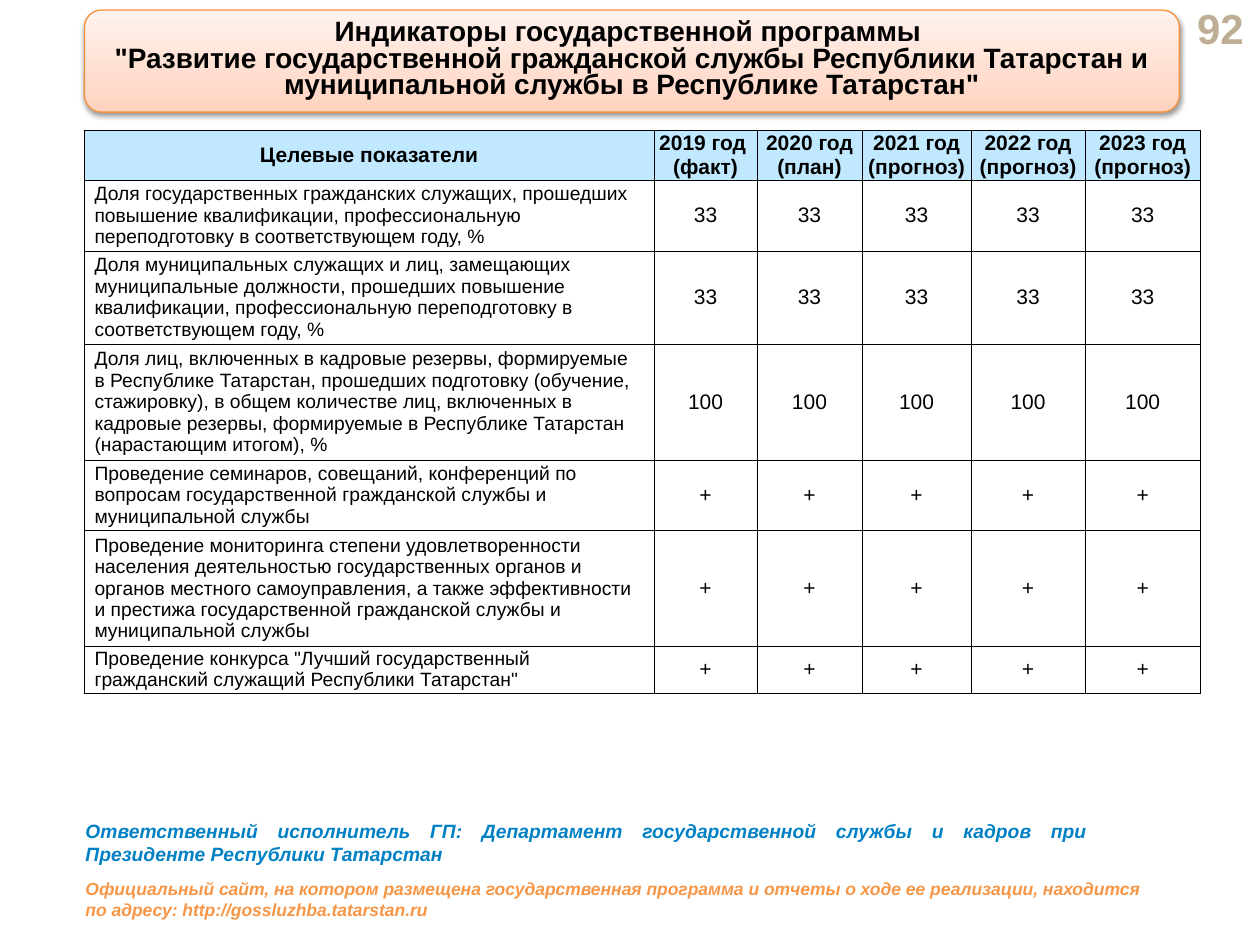
from dataclasses import dataclass

import lxml.etree
import pptx
import pptx.dml.color
import pptx.enum.shapes
import pptx.enum.text
import pptx.oxml
import pptx.oxml.ns
import pptx.util

Inches = pptx.util.Inches
Pt = pptx.util.Pt
ALIGN = pptx.enum.text.PP_ALIGN
ANCHOR = pptx.enum.text.MSO_ANCHOR
FIT = pptx.enum.text.MSO_AUTO_SIZE
NS = pptx.oxml.ns.nsdecls("a")


@dataclass(frozen=True)
class TextStyle:
    size: float
    color: str = "000000"
    bold: bool = False
    italic: bool = False
    align: ALIGN = ALIGN.LEFT


@dataclass(frozen=True)
class Theme:
    font: str = "Arial"
    header_fill: str = "C0E9FF"
    body_fill: str = "FFFFFF"
    grid: str = "000000"
    title_line: str = "F69240"
    title_stops: tuple = ((0, "FFD2BD"), (35, "FFDED0"), (100, "FFF2ED"))
    number: TextStyle = TextStyle(24, "BFAE96", True, align=ALIGN.RIGHT)
    title: TextStyle = TextStyle(16, bold=True, align=ALIGN.CENTER)
    header: TextStyle = TextStyle(12, bold=True, align=ALIGN.CENTER)
    indicator: TextStyle = TextStyle(11)
    value: TextStyle = TextStyle(12, align=ALIGN.CENTER)
    executor: TextStyle = TextStyle(11, "0081C5", True, True, ALIGN.JUSTIFY)
    website: TextStyle = TextStyle(10, "F79646", True, True)


@dataclass(frozen=True)
class Note:
    text: str
    style: TextStyle
    box: tuple[float, float, float, float]
    anchor: ANCHOR = ANCHOR.TOP


@dataclass(frozen=True)
class Indicator:
    name: str
    value: str
    height: float


THEME = Theme()

TITLE = (
    "Индикаторы государственной программы ",
    "\"Развитие государственной гражданской службы Республики Татарстан и "
    "муниципальной службы в Республике Татарстан\"",
)
HEADERS = (
    ("Целевые показатели",),
    ("2019 год ", "(факт)"),
    ("2020 год (план)",),
    ("2021 год", "(прогноз)"),
    ("2022 год", "(прогноз)"),
    ("2023 год", "(прогноз)"),
)
COLUMN_WIDTHS = (4.52, 0.82, 0.83, 0.87, 0.9, 0.92)
HEADER_HEIGHT = 0.4
INDICATORS = (
    Indicator("Доля государственных гражданских служащих, прошедших повышение "
              "квалификации, профессиональную переподготовку в соответствующем году, %",
              "33", 0.56),
    Indicator("Доля муниципальных служащих и лиц, замещающих муниципальные должности, "
              "прошедших повышение квалификации, профессиональную переподготовку в "
              "соответствующем году, %", "33", 0.74),
    Indicator("Доля лиц, включенных в кадровые резервы, формируемые в Республике "
              "Татарстан, прошедших подготовку (обучение, стажировку), в общем "
              "количестве лиц, включенных в кадровые резервы, формируемые в Республике "
              "Татарстан (нарастающим итогом), %", "100", 0.92),
    Indicator("Проведение семинаров, совещаний, конференций по вопросам "
              "государственной гражданской службы и муниципальной службы", "+", 0.56),
    Indicator("Проведение мониторинга степени удовлетворенности населения "
              "деятельностью государственных органов и органов местного "
              "самоуправления, а также эффективности и престижа государственной "
              "гражданской службы и муниципальной службы", "+", 0.92),
    Indicator("Проведение конкурса \"Лучший государственный гражданский служащий "
              "Республики Татарстан\"", "+", 0.37),
)
NOTES = (
    Note("92", THEME.number, (9.11, 0.05, 0.86, 0.34), ANCHOR.MIDDLE),
    Note("Ответственный исполнитель ГП: Департамент государственной службы и кадров "
         "при Президенте Республики Татарстан", THEME.executor, (0.58, 6.45, 8.15, 0.47)),
    Note("Официальный сайт, на котором размещена государственная программа и отчеты о "
         "ходе ее реализации, находится по адресу: http://gossluzhba.tatarstan.ru",
         THEME.website, (0.58, 6.92, 8.59, 0.43)),
)


def rgb(color: str) -> pptx.dml.color.RGBColor:
    return pptx.dml.color.RGBColor.from_string(color)


def add_run(paragraph, text: str, style: TextStyle) -> None:
    paragraph.alignment = style.align
    run = paragraph.add_run()
    run.text = text
    run.font.name = THEME.font
    run.font.size = Pt(style.size)
    run.font.bold = style.bold
    run.font.italic = style.italic
    run.font.color.rgb = rgb(style.color)


def draw_note(slide, note: Note) -> None:
    frame = slide.shapes.add_textbox(*map(Inches, note.box)).text_frame
    frame.word_wrap = True
    frame.vertical_anchor = note.anchor
    add_run(frame.paragraphs[0], note.text, note.style)


def draw_title(slide) -> None:
    banner = slide.shapes.add_shape(
        pptx.enum.shapes.MSO_SHAPE.ROUNDED_RECTANGLE,
        Inches(0.67), Inches(0.08), Inches(8.69), Inches(0.81))
    banner.line.color.rgb = rgb(THEME.title_line)
    banner.line.width = Pt(0.75)
    banner.fill.gradient()
    gradient = banner.fill._xPr.find(pptx.oxml.ns.qn("a:gradFill"))
    stops = "".join(f'<a:gs pos="{position * 1000}"><a:srgbClr val="{color}"/></a:gs>'
                    for position, color in THEME.title_stops)
    gradient.getparent().replace(gradient, pptx.oxml.parse_xml(
        f'<a:gradFill {NS} rotWithShape="1"><a:gsLst>{stops}</a:gsLst>'
        '<a:lin ang="16200000" scaled="0"/></a:gradFill>'))
    banner.shadow.inherit = False
    effects = banner.fill._xPr.find(pptx.oxml.ns.qn("a:effectLst"))
    effects.append(pptx.oxml.parse_xml(
        f'<a:outerShdw {NS} blurRad="{Pt(3.1)}" dist="{Pt(1.6)}" dir="5400000" '
        'rotWithShape="0"><a:srgbClr val="000000"><a:alpha val="38000"/>'
        '</a:srgbClr></a:outerShdw>'))
    frame = banner.text_frame
    frame.word_wrap = True
    frame.auto_size = FIT.SHAPE_TO_FIT_TEXT
    frame.vertical_anchor = ANCHOR.TOP
    paragraph = frame.paragraphs[0]
    paragraph.line_spacing = Pt(15)
    add_run(paragraph, TITLE[0], THEME.title)
    paragraph.add_line_break()
    add_run(paragraph, TITLE[1], THEME.title)


def fill_cell(cell, lines: tuple[str, ...], style: TextStyle, fill: str,
              side_margin: float = 0) -> None:
    cell.margin_left = cell.margin_right = Inches(side_margin)
    cell.margin_top = cell.margin_bottom = 0
    cell.vertical_anchor = ANCHOR.MIDDLE
    frame = cell.text_frame
    for index, line in enumerate(lines):
        paragraph = frame.add_paragraph() if index else frame.paragraphs[0]
        add_run(paragraph, line, style)
    properties = cell._tc.get_or_add_tcPr()
    for side in ("lnL", "lnR", "lnT", "lnB"):
        properties.append(pptx.oxml.parse_xml(
            f'<a:{side} {NS} w="{Pt(0.25)}"><a:solidFill>'
            f'<a:srgbClr val="{THEME.grid}"/></a:solidFill></a:{side}>'))
    cell.fill.solid()
    cell.fill.fore_color.rgb = rgb(fill)


def draw_indicators(slide) -> None:
    heights = (HEADER_HEIGHT, *(indicator.height for indicator in INDICATORS))
    table = slide.shapes.add_table(
        len(heights), len(COLUMN_WIDTHS), Inches(0.67), Inches(1.03),
        Inches(sum(COLUMN_WIDTHS)), Inches(sum(heights))).table
    table.first_row = table.horz_banding = False
    for column, width in zip(table.columns, COLUMN_WIDTHS):
        column.width = Inches(width)
    for row, height in zip(table.rows, heights):
        row.height = Inches(height)
    for column, lines in enumerate(HEADERS):
        fill_cell(table.cell(0, column), lines, THEME.header, THEME.header_fill)
    for row, indicator in enumerate(INDICATORS, 1):
        fill_cell(table.cell(row, 0), (indicator.name,), THEME.indicator,
                  THEME.body_fill, 0.08)
        for column in range(1, len(HEADERS)):
            fill_cell(table.cell(row, column), (indicator.value,), THEME.value,
                      THEME.body_fill)


def main() -> None:
    presentation = pptx.Presentation()
    presentation.slide_width = Inches(10)
    presentation.slide_height = Inches(7.5)
    slide = presentation.slides.add_slide(presentation.slide_layouts[6])
    page_number, *footnotes = NOTES
    draw_note(slide, page_number)
    draw_title(slide)
    draw_indicators(slide)
    for footnote in footnotes:
        draw_note(slide, footnote)
    presentation.save("out.pptx")


if __name__ == "__main__":
    main()
